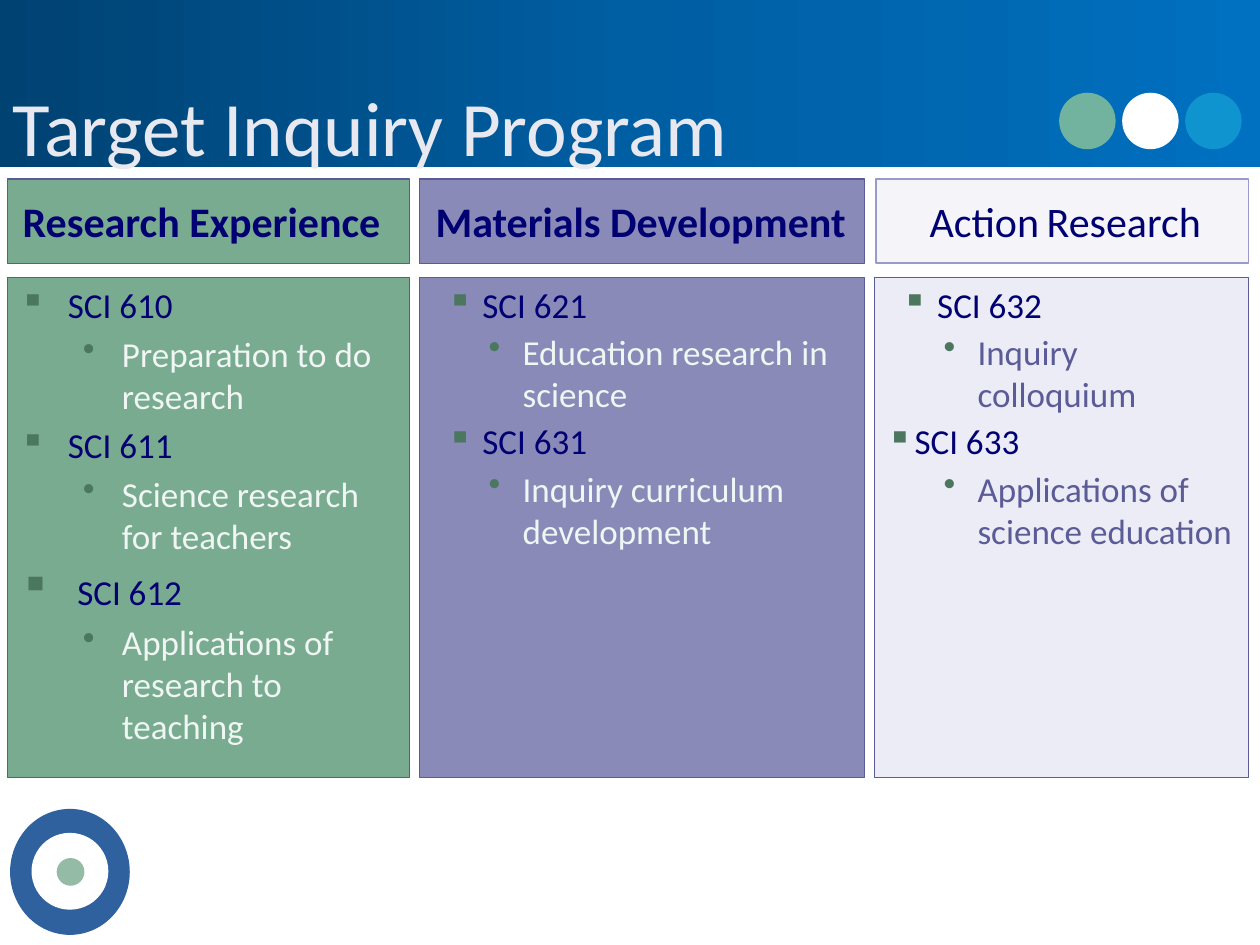
from lxml import etree
from pptx import Presentation
from pptx.dml.color import RGBColor
from pptx.enum.shapes import MSO_SHAPE as Shape
from pptx.enum.text import MSO_ANCHOR as Anchor, MSO_AUTO_SIZE as AutoSize, PP_ALIGN as Align
from pptx.oxml.ns import qn
from pptx.util import Inches, Pt

WHITE = RGBColor(0xFF, 0xFF, 0xFF)
BAND_DARK = RGBColor(0x00, 0x42, 0x72)
BAND_MIDDLE = RGBColor(0x00, 0x5E, 0xA2)
BAND_LIGHT = RGBColor(0x00, 0x70, 0xC0)
SKY = RGBColor(0x0F, 0x94, 0xCF)
TEAL = RGBColor(0x71, 0xB3, 0x9F)
RING_BLUE = RGBColor(0x2E, 0x61, 0x9E)
PALE_GREEN = RGBColor(0x93, 0xBB, 0xA5)
GREEN = RGBColor(0x78, 0xAB, 0x90)
PURPLE = RGBColor(0x8A, 0x8A, 0xB9)
LAVENDER = RGBColor(0xD6, 0xD6, 0xEB)
OUTLINE = RGBColor(0x5B, 0x5B, 0x98)
LIGHT_OUTLINE = RGBColor(0x99, 0x99, 0xCC)
BULLET = RGBColor(0x4B, 0x77, 0x5F)
NAVY = RGBColor(0x00, 0x00, 0x73)
MINT = RGBColor(0xF0, 0xF6, 0xF3)
TITLE_COLOR = RGBColor(0xE8, 0xE8, 0xF1)


class SlideBuilder:
    font = "Calibri"

    def __init__(self, slide):
        self.slide = slide

    def shape(self, kind, left, top, width, height, fill, line=None, line_width=0.75, alpha=None):
        shape = self.slide.shapes.add_shape(
            kind, Inches(left), Inches(top), Inches(width), Inches(height))
        shape.shadow.inherit = False
        shape.fill.solid()
        shape.fill.fore_color.rgb = fill
        if alpha is not None:
            color = shape.element.spPr.find(qn("a:solidFill"))[0]
            etree.SubElement(color, qn("a:alpha"), val=str(alpha * 1000))
        if line is None:
            shape.line.fill.background()
        else:
            shape.line.color.rgb = line
            shape.line.width = Pt(line_width)
        return shape

    def gradient_band(self, width, height, colors):
        band = self.shape(Shape.RECTANGLE, 0, 0, width, height, colors[0])
        band.fill.gradient()
        band.fill.gradient_angle = 0
        stops = band.element.spPr.find(qn("a:gradFill")).find(qn("a:gsLst"))
        for stop in list(stops):
            stops.remove(stop)
        for index, color in enumerate(colors):
            position = index * 100000 // (len(colors) - 1)
            stop = etree.SubElement(stops, qn("a:gs"), pos=str(position))
            etree.SubElement(stop, qn("a:srgbClr"), val=str(color))

    def run(self, paragraph, text, size, color, bold=False):
        run = paragraph.add_run()
        run.text = text
        run.font.name = self.font
        run.font.size = Pt(size)
        run.font.bold = bold
        run.font.color.rgb = color

    def title(self, text, left, top, width, height):
        title = self.slide.shapes.title
        title.left, title.top = Inches(left), Inches(top)
        title.width, title.height = Inches(width), Inches(height)
        frame = title.text_frame
        frame.auto_size = AutoSize.NONE
        frame.vertical_anchor = Anchor.MIDDLE
        frame.paragraphs[0].alignment = Align.LEFT
        self.run(frame.paragraphs[0], text, 44, TITLE_COLOR)
        title.element.getparent().append(title.element)

    def heading(self, frame, runs, anchor, bold, space, indent=0):
        frame.word_wrap = True
        frame.vertical_anchor = anchor
        paragraph = frame.paragraphs[0]
        paragraph.alignment = Align.CENTER
        paragraph.space_before = Pt(space)
        self.indent(paragraph, indent, 0)
        for text, size in runs:
            self.run(paragraph, text, size, NAVY, bold)

    def heading_box(self, text, left, width):
        box = self.slide.shapes.add_textbox(
            Inches(left), Inches(1.5), Inches(width), Inches(0.5))
        self.heading(box.text_frame, [(text, 24)], Anchor.BOTTOM, True, 4.8)

    def indent(self, paragraph, margin, first):
        properties = paragraph._p.get_or_add_pPr()
        properties.set("marL", str(Inches(margin)))
        properties.set("indent", str(Inches(first)))
        return properties

    def bullet_item(self, paragraph, runs, level, margin, first, space):
        paragraph.level = level
        paragraph.alignment = Align.LEFT
        paragraph.space_before = Pt(space)
        properties = self.indent(paragraph, margin, first)
        color = etree.SubElement(properties, qn("a:buClr"))
        etree.SubElement(color, qn("a:srgbClr"), val=str(BULLET))
        etree.SubElement(properties, qn("a:buChar"), char="▪•"[level])
        for text, size, run_color in runs:
            self.run(paragraph, text, size, run_color)

    def course_list(self, panel, courses, indents, detail_color, space):
        frame = panel.text_frame
        frame.word_wrap = True
        frame.vertical_anchor = Anchor.TOP
        paragraph = frame.paragraphs[0]
        for index, (course, detail, *options) in enumerate(courses):
            if index:
                paragraph = frame.add_paragraph()
            course_indent = indents[0]
            runs = [(course, 20, NAVY)]
            for option in options:
                if isinstance(option, str):
                    runs.insert(0, (option, 24, NAVY))
                else:
                    course_indent = option
            self.bullet_item(paragraph, runs, 0, *course_indent, space)
            self.bullet_item(frame.add_paragraph(), [(detail, 20, detail_color)],
                             1, *indents[1], space)


def main():
    presentation = Presentation()
    presentation.slide_width, presentation.slide_height = Inches(10), Inches(7.5)
    slide = presentation.slides.add_slide(presentation.slide_layouts[5])
    builder = SlideBuilder(slide)

    builder.gradient_band(10, 1.33, [BAND_DARK, BAND_MIDDLE, BAND_LIGHT])
    for index, color in enumerate([TEAL, WHITE, SKY]):
        builder.shape(Shape.OVAL, 8.42 + 0.5 * index, 0.75, 0.42, 0.42, color, color, 2)
    for left, top, width, height, color in [
        (0.08, 6.42, 0.95, 1, RING_BLUE),
        (0.25, 6.61, 0.61, 0.61, WHITE),
        (0.45, 6.81, 0.22, 0.22, PALE_GREEN),
    ]:
        builder.shape(Shape.OVAL, left, top, width, height, color)

    builder.shape(Shape.RECTANGLE, 3.33, 1.42, 3.53, 0.67, PURPLE, OUTLINE)
    builder.shape(Shape.RECTANGLE, 0.06, 1.42, 3.19, 0.67, GREEN, OUTLINE)
    builder.title("Target Inquiry Program", 0, 0.41, 9.17, 1.17)
    builder.heading_box("Research Experience", 0.01, 3.18)
    builder.heading_box("Materials Development", 3.33, 3.51)
    action = builder.shape(
        Shape.RECTANGLE, 6.95, 1.42, 2.96, 0.67, LAVENDER, LIGHT_OUTLINE, 1, alpha=25)
    builder.heading(action.text_frame, [("Action", 24), (" ", 19), ("Research", 24)],
                    Anchor.MIDDLE, False, 3, 0.05)

    wide = [(0.38, -0.38), (0.81, -0.31)]
    narrow = [(0.4, -0.28), (0.72, -0.27)]
    columns = [
        (0.06, 3.19, GREEN, None, wide, MINT, 4, [
            ("SCI 610", "Preparation to do research"),
            ("SCI 611", "Science research for teachers"),
            ("SCI 612", "Applications of research to teaching", " "),
        ]),
        (3.33, 3.53, PURPLE, None, narrow, MINT, 3, [
            ("SCI 621", "Education research in science"),
            ("SCI 631", "Inquiry curriculum development"),
        ]),
        (6.94, 2.97, LAVENDER, 44, narrow, OUTLINE, 3, [
            ("SCI 632", "Inquiry colloquium"),
            ("SCI 633", "Applications of science education", (0.22, -0.27)),
        ]),
    ]
    for left, width, fill, alpha, indents, detail_color, space, courses in columns:
        panel = builder.shape(
            Shape.RECTANGLE, left, 2.2, width, 3.97, fill, OUTLINE, alpha=alpha)
        builder.course_list(panel, courses, indents, detail_color, space)

    presentation.save("out.pptx")


if __name__ == "__main__":
    main()
